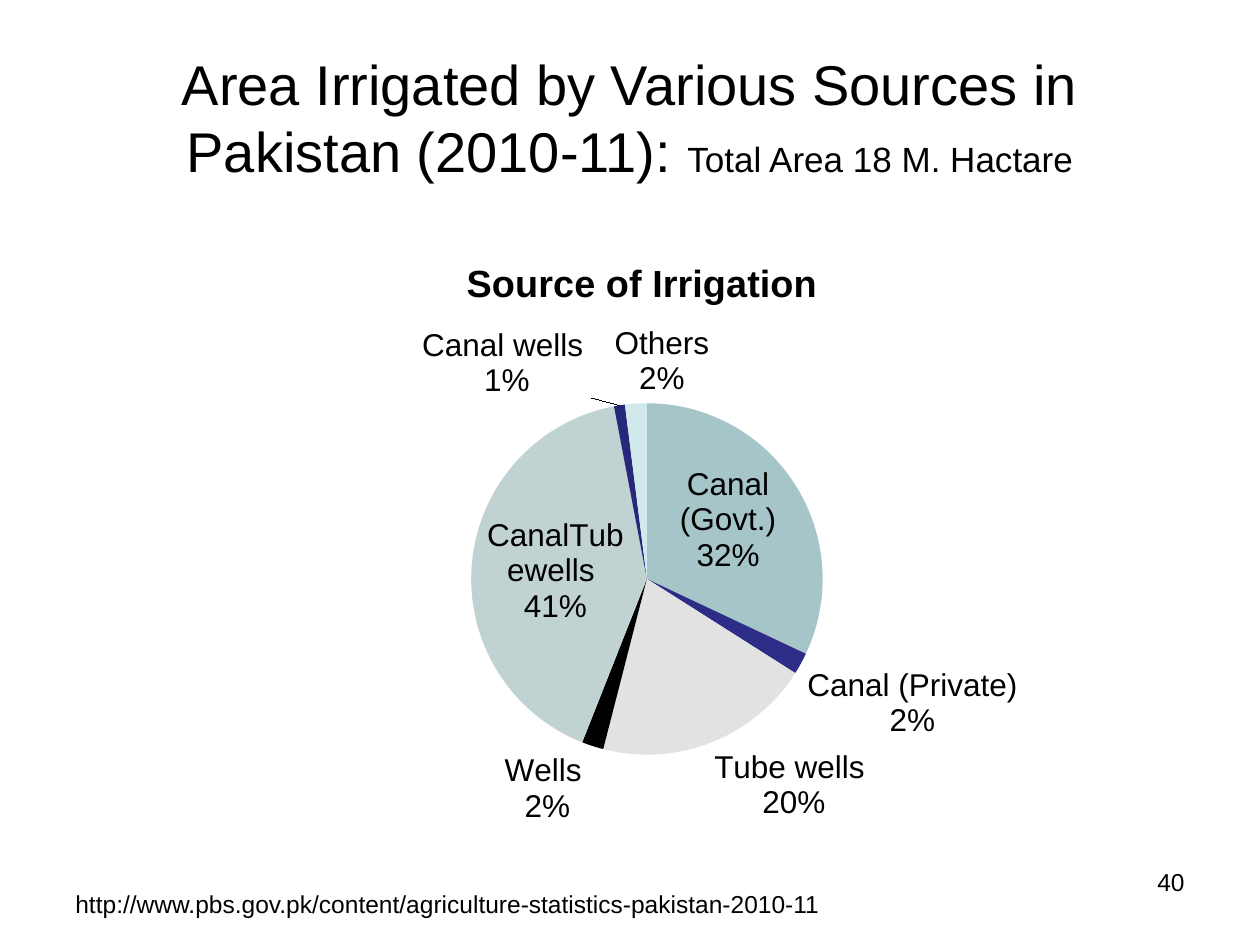
from lxml import etree
from pptx import Presentation
from pptx import util as u
from pptx.chart.data import CategoryChartData
from pptx.dml.color import RGBColor
from pptx.enum import chart as c, text as t
from pptx.oxml.ns import qn

FONT = "Arial"
BLACK = "000000"
CHART_TITLE = "Source of Irrigation"
# Source of irrigation, share in percent, slice colour
SOURCES = [
    ("Canal (Govt.)", 32, "A5C5C8"),
    ("Canal (Private)", 2, "2D2D87"),
    ("Tube wells ", 20, "E2E2E2"),
    ("Wells ", 2, "000000"),
    ("CanalTubewells ", 41, "C1D2D3"),
    ("Canal wells ", 1, "28287A"),
    ("Others", 2, "D0E9EB"),
]


def color(value):
    return RGBColor.from_string(value)


def format_font(font, size, bold=False):
    font.name = FONT
    font.size = u.Pt(size)
    font.bold = bold
    font.color.rgb = color(BLACK)


def set_title(slide, main, detail):
    title = slide.shapes.title
    title.left, title.top = u.Inches(0.5), u.Inches(0.3)
    title.width, title.height = u.Inches(9), u.Inches(1.25)
    frame = title.text_frame
    frame.vertical_anchor = t.MSO_ANCHOR.MIDDLE
    paragraph = frame.paragraphs[0]
    paragraph.alignment = t.PP_ALIGN.CENTER
    for words, size in ((main, 32), (detail, 20)):
        run = paragraph.add_run()
        run.text = words
        format_font(run.font, size)


def add_text(slide, words, left, top, width, height, align):
    box = slide.shapes.add_textbox(*map(u.Inches, (left, top, width, height)))
    frame = box.text_frame
    frame.word_wrap = True
    frame.text = words
    paragraph = frame.paragraphs[0]
    paragraph.alignment = align
    format_font(paragraph.runs[0].font, 14)


def place_chart_part(part, **fractions):
    """Give a chart part a manual layout, in fractions of the chart."""
    layout = part.find(qn("c:layout"))
    if layout is None:
        layout = etree.Element(qn("c:layout"))
        text_part = part.find(qn("c:tx"))
        if text_part is None:
            part.insert(0, layout)
        else:
            text_part.addnext(layout)
    manual = etree.SubElement(layout, qn("c:manualLayout"))
    settings = {"xMode": "edge", "yMode": "edge", **fractions}
    if "w" in fractions:
        etree.SubElement(manual, qn("c:layoutTarget")).set("val", "inner")
    for name, value in settings.items():
        etree.SubElement(manual, qn(f"c:{name}")).set("val", str(value))


def add_pie(slide, left, top, width, height):
    data = CategoryChartData()
    data.categories = [name for name, _, _ in SOURCES]
    data.add_series(CHART_TITLE, [share for _, share, _ in SOURCES])
    frame = slide.shapes.add_chart(
        c.XL_CHART_TYPE.PIE, *map(u.Inches, (left, top, width, height)), data)
    chart = frame.chart
    format_font(chart.font, 18)
    chart.has_legend = False

    # Chart title and pie position
    chart.has_title = True
    title = chart.chart_title
    title.include_in_layout = False
    title.text_frame.text = CHART_TITLE
    format_font(title.text_frame.paragraphs[0].runs[0].font, 21.6, bold=True)
    root = chart.element
    place_chart_part(root.find(".//" + qn("c:title")), x=0.35, y=0.05)
    place_chart_part(root.find(".//" + qn("c:plotArea")),
                     x=0.36, y=0.29, w=0.31, h=0.57)

    # Slices
    plot = chart.plots[0]
    plot.vary_by_categories = True
    for index, (_, _, fill_color) in enumerate(SOURCES):
        slice_format = plot.series[0].points[index].format
        slice_format.fill.solid()
        slice_format.fill.fore_color.rgb = color(fill_color)
        slice_format.line.fill.background()

    # Labels with name and share
    labels = plot.series[0].data_labels
    labels.show_category_name = True
    labels.show_percentage = True
    labels.show_value = False
    labels.number_format = "0%"
    labels.number_format_is_linked = False
    labels.position = c.XL_LABEL_POSITION.BEST_FIT
    format_font(labels.font, 18)
    separator = etree.Element(qn("c:separator"))
    separator.text = "\n"
    root.find(".//" + qn("c:dLbls")).find(qn("c:showBubbleSize")).addnext(separator)


def main():
    presentation = Presentation()
    presentation.slide_width = u.Inches(10)
    presentation.slide_height = u.Inches(7.5)
    slide = presentation.slides.add_slide(presentation.slide_layouts[5])

    set_title(slide, "Area Irrigated by Various Sources in Pakistan (2010-11): ",
              "Total Area 18 M. Hactare")
    add_pie(slide, 0.5, 1.75, 9, 4.95)

    # Page number and data source
    add_text(slide, "40", 7.17, 6.83, 2.33, 0.52, t.PP_ALIGN.RIGHT)
    add_text(slide, "http://www.pbs.gov.pk/content/agriculture-statistics-pakistan-2010-11",
             0.5, 7.01, 8.17, 0.34, t.PP_ALIGN.LEFT)
    presentation.save("out.pptx")


if __name__ == "__main__":
    main()
